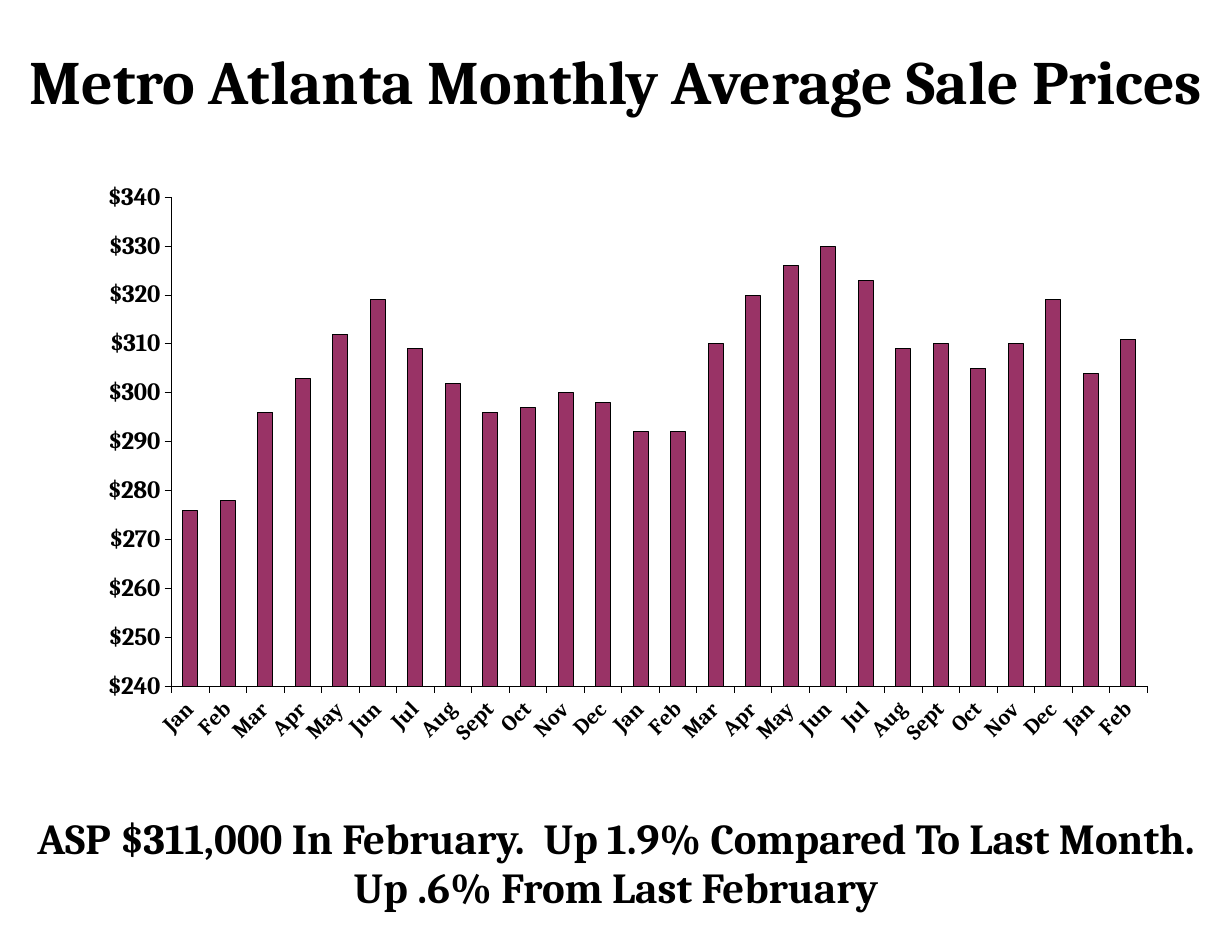
from dataclasses import dataclass

from lxml.etree import SubElement
from pptx import Presentation
from pptx.chart.data import CategoryChartData
from pptx.dml.color import RGBColor
from pptx.enum.chart import XL_CHART_TYPE, XL_TICK_LABEL_POSITION, XL_TICK_MARK
from pptx.enum.text import MSO_ANCHOR, PP_ALIGN
from pptx.oxml.ns import qn
from pptx.util import Emu, Pt


@dataclass(frozen=True)
class Theme:
    """Colours, font and type sizes of the slide."""
    font: str = "Cambria"
    ink: RGBColor = RGBColor(0x00, 0x00, 0x00)
    bar: RGBColor = RGBColor(0x99, 0x33, 0x66)
    title_size: float = 39.6
    summary_size: float = 27.5
    month_size: float = 14
    price_size: float = 16


THEME = Theme()
MONTHS = ["Jan", "Feb", "Mar", "Apr", "May", "Jun",
          "Jul", "Aug", "Sept", "Oct", "Nov", "Dec"]
PRICES = [276, 278, 296, 303, 312, 319, 309, 302, 296, 297, 300, 298,
          292, 292, 310, 320, 326, 330, 323, 309, 310, 305, 310, 319,
          304, 311]


def px(length):
    """Turn pixels into EMU."""
    return Emu(round(length * 914400 / 112))


def style_font(font, size):
    """Apply the bold theme font at the given size."""
    font.name = THEME.font
    font.size = Pt(size)
    font.bold = True
    font.color.rgb = THEME.ink


def add_text(slide, lines, box, *, size, line_spacing=1.0, space_before=0):
    """Place centred bold lines in the middle of a box."""
    frame = slide.shapes.add_textbox(*map(px, box)).text_frame
    frame.word_wrap = True
    frame.vertical_anchor = MSO_ANCHOR.MIDDLE
    frame.margin_left = frame.margin_right = 0
    frame.margin_top = frame.margin_bottom = 0
    for index, line in enumerate(lines):
        paragraph = frame.add_paragraph() if index else frame.paragraphs[0]
        paragraph.alignment = PP_ALIGN.CENTER
        paragraph.line_spacing = line_spacing
        paragraph.space_before = Pt(space_before if index else 0)
        run = paragraph.add_run()
        run.text = line
        style_font(run.font, size)


def style_axis(axis, size):
    """Give an axis outside ticks, a thin line and bold labels."""
    axis.has_major_gridlines = False
    axis.major_tick_mark = XL_TICK_MARK.OUTSIDE
    axis.minor_tick_mark = XL_TICK_MARK.NONE
    axis.format.line.color.rgb = THEME.ink
    axis.format.line.width = Pt(0.25)
    style_font(axis.tick_labels.font, size)


def set_plot_layout(chart, **fractions):
    """Fix the inner plot area as fractions of the chart."""
    plot_area = chart.plots[0]._element.getparent()
    layout = plot_area.find(qn("c:layout"))
    if layout is None:
        layout = SubElement(plot_area, qn("c:layout"))
        plot_area.insert(0, layout)
    manual = SubElement(layout, qn("c:manualLayout"))
    settings = {"layoutTarget": "inner", "xMode": "edge", "yMode": "edge", **fractions}
    for name, value in settings.items():
        SubElement(manual, qn(f"c:{name}")).set("val", str(value))


def add_price_chart(slide, box):
    """Draw the monthly sale price columns in a box."""
    data = CategoryChartData()
    data.categories = [MONTHS[index % 12] for index in range(len(PRICES))]
    data.add_series("Series 1", PRICES)
    chart = slide.shapes.add_chart(
        XL_CHART_TYPE.COLUMN_CLUSTERED, *map(px, box), data).chart
    chart.has_legend = False
    chart.has_title = False
    style_font(chart.font, THEME.month_size)
    set_plot_layout(chart, x=0.107, y=0.088, w=0.876, h=0.717)

    plot = chart.plots[0]
    plot.gap_width = 150
    plot.vary_by_categories = False
    series = plot.series[0]
    series.format.fill.solid()
    series.format.fill.fore_color.rgb = THEME.bar
    series.format.line.color.rgb = THEME.ink
    series.format.line.width = Pt(0.25)

    months = chart.category_axis
    style_axis(months, THEME.month_size)
    months.tick_label_position = XL_TICK_LABEL_POSITION.LOW
    body = months._element.find(qn("c:txPr")).find(qn("a:bodyPr"))
    body.set("rot", "-2700000")
    body.set("vert", "horz")

    prices = chart.value_axis
    style_axis(prices, THEME.price_size)
    prices.minimum_scale = 240
    prices.maximum_scale = 340
    prices.major_unit = 10
    prices.tick_labels.number_format = '"$"#,##0'
    prices.tick_labels.number_format_is_linked = False


def main():
    """Build and save the sale price slide."""
    presentation = Presentation()
    presentation.slide_width = px(1232)
    presentation.slide_height = px(952)
    slide = presentation.slides.add_slide(presentation.slide_layouts[6])
    add_text(slide, ["Metro Atlanta Monthly Average Sale Prices"],
             (0, 40, 1232, 80), size=THEME.title_size)
    add_price_chart(slide, (52, 137, 1114, 682))
    add_text(slide, ["ASP $311,000 In February.  Up 1.9% Compared To Last Month.",
                     "Up .6% From Last February"],
             (0, 805, 1232, 120), size=THEME.summary_size,
             line_spacing=0.9, space_before=2)
    presentation.save("out.pptx")


if __name__ == "__main__":
    main()
